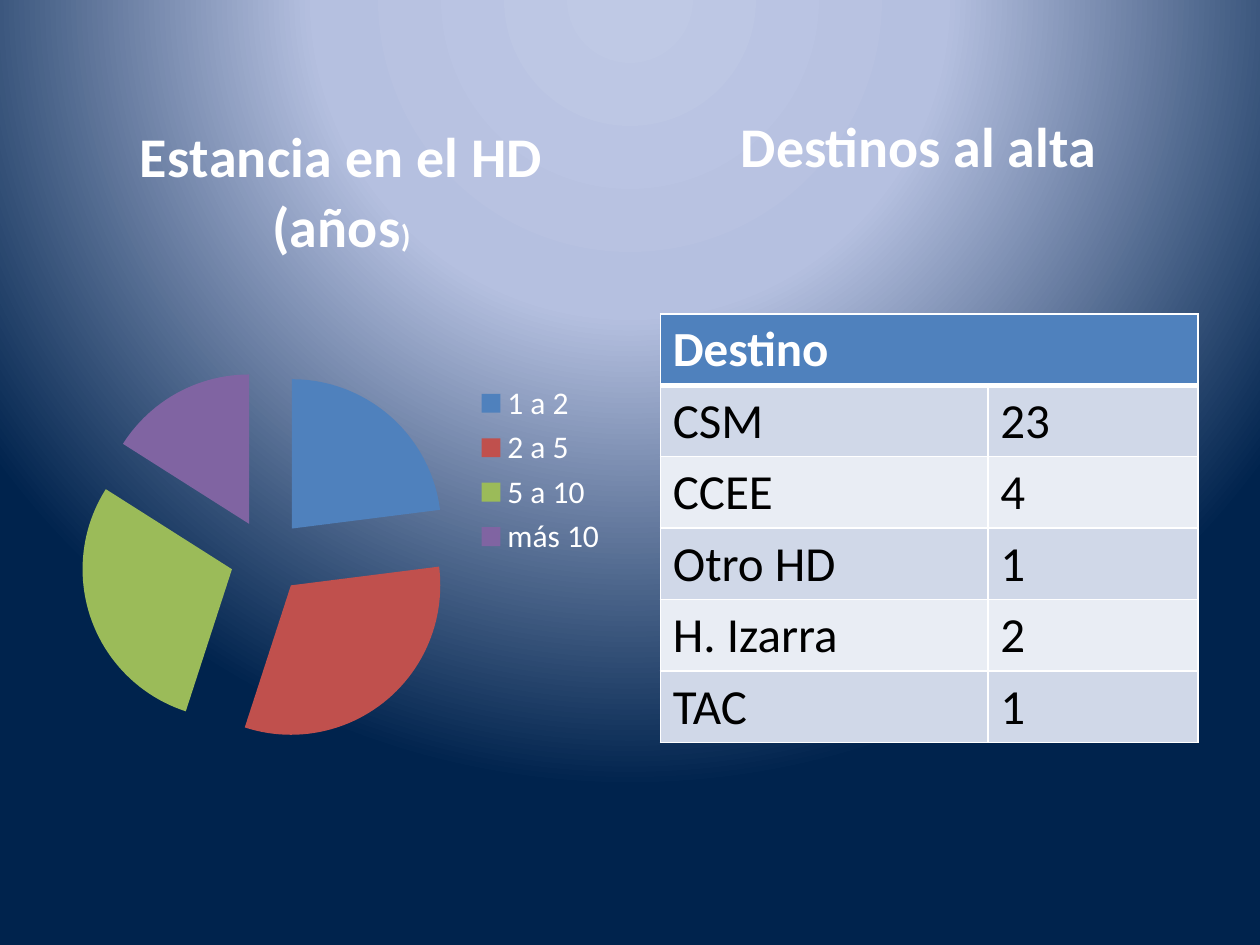
import dataclasses

import pptx
import pptx.chart.data
import pptx.dml.color
import pptx.enum.chart
import pptx.enum.text
import pptx.oxml
import pptx.oxml.ns
import pptx.util
from pptx.util import Inches


@dataclasses.dataclass(frozen=True)
class Theme:
    font: str = "Calibri"
    white: str = "FFFFFF"
    black: str = "000000"
    header: str = "4F81BD"
    bands: tuple = ("D0D8E8", "E9EDF4")
    slices: tuple = ("4F81BD", "C0504D", "9BBB59", "8064A2")
    background: tuple = ((0, "BFC9E5"), (40, "B5C0E0"), (100, "00234D"))
    title_size: int = 32
    table_size: int = 28
    legend_size: int = 18


def rgb(color):
    return pptx.dml.color.RGBColor.from_string(color)


def format_font(font, name, size, color, bold=False):
    font.name = name
    font.size = pptx.util.Pt(size)
    font.bold = bold
    font.color.rgb = rgb(color)


def write_text(paragraph, text, **font_format):
    run = paragraph.add_run()
    run.text = text
    format_font(run.font, **font_format)


class SlideBuilder:
    """Builds themed elements on the current slide."""

    def __init__(self, slide, theme):
        self.slide = slide
        self.theme = theme

    def font_format(self, size, color, bold=False):
        return dict(name=self.theme.font, size=size, color=color, bold=bold)

    def background(self):
        fill = self.slide.background.fill
        fill.gradient()
        gradient = self.slide.element.find(".//" + pptx.oxml.ns.qn("a:gradFill"))
        stops = "".join(
            f'<a:gs pos="{position * 1000}"><a:srgbClr val="{color}"/></a:gs>'
            for position, color in self.theme.background
        )
        radial = pptx.oxml.parse_xml(
            f'<a:gradFill {pptx.oxml.ns.nsdecls("a")} rotWithShape="1">'
            f'<a:gsLst>{stops}</a:gsLst><a:path path="circle">'
            '<a:fillToRect l="50000" t="-80000" r="50000" b="180000"/>'
            "</a:path></a:gradFill>"
        )
        gradient.getparent().replace(gradient, radial)

    def heading(self, text, left, top, width, height):
        shape = self.slide.shapes.add_textbox(
            Inches(left), Inches(top), Inches(width), Inches(height))
        frame = shape.text_frame
        frame.word_wrap = True
        frame.vertical_anchor = pptx.enum.text.MSO_ANCHOR.BOTTOM
        paragraph = frame.paragraphs[0]
        paragraph.alignment = pptx.enum.text.PP_ALIGN.CENTER
        write_text(paragraph, text,
                   **self.font_format(self.theme.title_size, self.theme.white, True))

    def pie(self, title_runs, values, left, top, width, height):
        theme = self.theme
        data = pptx.chart.data.CategoryChartData()
        data.categories = list(values)
        data.add_series("Series 1", list(values.values()))
        chart = self.slide.shapes.add_chart(
            pptx.enum.chart.XL_CHART_TYPE.PIE_EXPLODED,
            Inches(left), Inches(top), Inches(width), Inches(height), data).chart
        format_font(chart.font, **self.font_format(theme.legend_size, theme.white))
        chart.has_title = True
        paragraph = chart.chart_title.text_frame.paragraphs[0]
        for text, size in title_runs:
            write_text(paragraph, text, **self.font_format(size, theme.white, True))
        chart.has_legend = True
        chart.legend.position = pptx.enum.chart.XL_LEGEND_POSITION.RIGHT
        chart.legend.include_in_layout = False
        format_font(chart.legend.font, **self.font_format(theme.legend_size, theme.white))
        plot = chart.plots[0]
        plot.vary_by_categories = True
        for index, color in enumerate(theme.slices):
            fill = plot.series[0].points[index].format.fill
            fill.solid()
            fill.fore_color.rgb = rgb(color)
        for explosion in chart.element.iter(pptx.oxml.ns.qn("c:explosion")):
            explosion.set("val", "25")

    def borders(self, cell, top=1, bottom=1):
        properties = cell._tc.get_or_add_tcPr()
        widths = {"lnL": 1, "lnR": 1, "lnT": top, "lnB": bottom}
        for index, (side, width) in enumerate(widths.items()):
            properties.insert(index, pptx.oxml.parse_xml(
                f'<a:{side} {pptx.oxml.ns.nsdecls("a")} w="{pptx.util.Pt(width)}">'
                f'<a:solidFill><a:srgbClr val="{self.theme.white}"/></a:solidFill>'
                f"</a:{side}>"))

    def table(self, header, rows, column_widths, left, top, height):
        theme = self.theme
        table = self.slide.shapes.add_table(
            len(rows) + 1, len(column_widths), Inches(left), Inches(top),
            Inches(sum(column_widths)), Inches(height)).table
        for column, width in zip(table.columns, column_widths):
            column.width = Inches(width)
        for row_index, texts in enumerate([(header, ""), *rows]):
            is_header = row_index == 0
            color = theme.white if is_header else theme.black
            for column_index, text in enumerate(texts):
                cell = table.cell(row_index, column_index)
                cell.fill.solid()
                cell.fill.fore_color.rgb = rgb(
                    theme.header if is_header else theme.bands[(row_index - 1) % 2])
                self.borders(cell, top=3 if row_index == 1 else 1,
                             bottom=3 if is_header else 1)
                if text:
                    write_text(cell.text_frame.paragraphs[0], text,
                               **self.font_format(theme.table_size, color, is_header))
        table.cell(0, 0).merge(table.cell(0, len(column_widths) - 1))


def main():
    presentation = pptx.Presentation()
    presentation.slide_width = Inches(10)
    presentation.slide_height = Inches(7.5)
    slide = presentation.slides.add_slide(presentation.slide_layouts[6])
    theme = Theme()
    builder = SlideBuilder(slide, theme)
    builder.background()
    builder.pie(
        [("Estancia en el HD (años", theme.title_size), (")", theme.legend_size)],
        {"1 a 2": 23, "2 a 5": 32, "5 a 10": 29, "más 10": 16},
        0.5, 0.76, 4.42, 5.94)
    builder.heading("Destinos al alta", 5.08, 0.76, 4.42, 0.71)
    builder.table(
        "Destino",
        [("CSM", "23"), ("CCEE", "4"), ("Otro HD", "1"), ("H. Izarra", "2"), ("TAC", "1")],
        (2.6, 1.67), 5.24, 2.49, 3.4)
    presentation.save("out.pptx")


if __name__ == "__main__":
    main()
